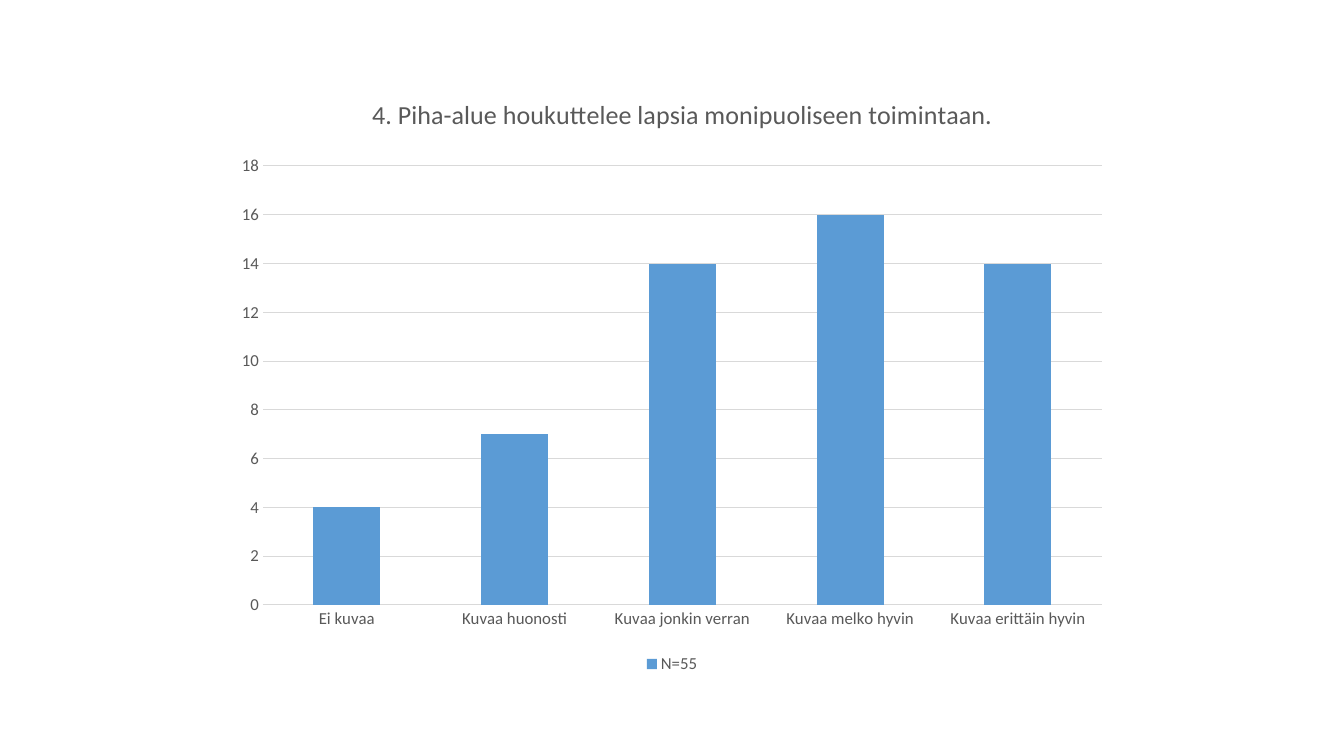
from dataclasses import dataclass

from lxml import etree
from pptx import Presentation, util as u
from pptx.chart.data import CategoryChartData
from pptx.dml.color import RGBColor
from pptx.enum import chart as kinds
from pptx.oxml import ns


@dataclass(frozen=True)
class Theme:
    face: str = "Calibri"
    ink: str = "595959"
    rule: str = "D9D9D9"
    bar: str = "5B9BD5"
    head: float = 18.6
    label: float = 12
    hair: float = 0.75


def px(count):
    return u.Emu(round(count * u.Inches(1) / 100.8))


def style(font, face, size, color):
    font.name = face
    font.size = u.Pt(size)
    font.bold = False
    font.color.rgb = RGBColor.from_string(color)


def write(frame, words, **form):
    run = frame.paragraphs[0].add_run()
    run.text = words
    style(run.font, **form)


def place(item, **spots):
    for old in item.findall(ns.qn("c:layout")):
        item.remove(old)
    layout = etree.Element(ns.qn("c:layout"))
    manual = etree.SubElement(layout, ns.qn("c:manualLayout"))
    for tag, value in spots.items():
        etree.SubElement(manual, ns.qn(f"c:{tag}"), val=str(value))
    return layout


class Page:
    def __init__(self, slide, theme):
        self.slide = slide
        self.theme = theme

    def line(self, form):
        form.line.color.rgb = RGBColor.from_string(self.theme.rule)
        form.line.width = u.Pt(self.theme.hair)

    def label(self, font):
        style(font, self.theme.face, self.theme.label, self.theme.ink)

    def title(self, chart, words, left, top):
        chart.has_title = True
        title = chart.chart_title
        write(title.text_frame, words, face=self.theme.face,
              size=self.theme.head, color=self.theme.ink)
        title.include_in_layout = False
        node = chart._chartSpace.chart.find(ns.qn("c:title"))
        layout = place(node, xMode="edge", yMode="edge", x=left, y=top)
        node.find(ns.qn("c:tx")).addnext(layout)

    def axes(self, chart, top, step):
        for axis in (chart.category_axis, chart.value_axis):
            axis.major_tick_mark = kinds.XL_TICK_MARK.NONE
            axis.minor_tick_mark = kinds.XL_TICK_MARK.NONE
            self.label(axis.tick_labels.font)
        self.line(chart.category_axis.format)
        scale = chart.value_axis
        scale.minimum_scale, scale.maximum_scale = 0, top
        scale.major_unit = step
        scale.format.line.fill.background()
        scale.has_major_gridlines = True
        self.line(scale.major_gridlines.format)

    def columns(self, box, name, counts):
        data = CategoryChartData()
        data.categories = list(counts)
        data.add_series(name, list(counts.values()))
        chart = self.slide.shapes.add_chart(
            kinds.XL_CHART_TYPE.COLUMN_STACKED, *map(px, box), data).chart
        self.label(chart.font)
        plot = chart.plots[0]
        plot.gap_width, plot.overlap = 150, 100
        plot.vary_by_categories = False
        fill = plot.series[0].format.fill
        fill.solid()
        fill.fore_color.rgb = RGBColor.from_string(self.theme.bar)
        chart.has_legend = True
        chart.legend.position = kinds.XL_LEGEND_POSITION.BOTTOM
        chart.legend.include_in_layout = False
        self.label(chart.legend.font)
        return chart

    def frame(self, chart, box, inner):
        left, top, wide, high = box
        x, y, w, h = inner
        area = chart._chartSpace.chart.plotArea
        area.insert(0, place(
            area, layoutTarget="inner", xMode="edge", yMode="edge",
            x=round((x - left) / wide, 4), y=round((y - top) / high, 4),
            w=round(w / wide, 4), h=round(h / high, 4)))


def main():
    deck = Presentation()
    deck.slide_width, deck.slide_height = px(1344), px(756)
    page = Page(deck.slides.add_slide(deck.slide_layouts[6]), Theme())
    box = (224, 80, 896, 598)
    chart = page.columns(box, "N=55", {
        "Ei kuvaa": 4,
        "Kuvaa huonosti": 7,
        "Kuvaa jonkin verran": 14,
        "Kuvaa melko hyvin": 16,
        "Kuvaa erittäin hyvin": 14,
    })
    page.title(chart, "4. Piha-alue houkuttelee lapsia monipuoliseen toimintaan.",
               0.16, 0.02)
    page.axes(chart, 18, 2)
    page.frame(chart, box, (263, 166, 839, 439))
    deck.save("out.pptx")


if __name__ == "__main__":
    main()
